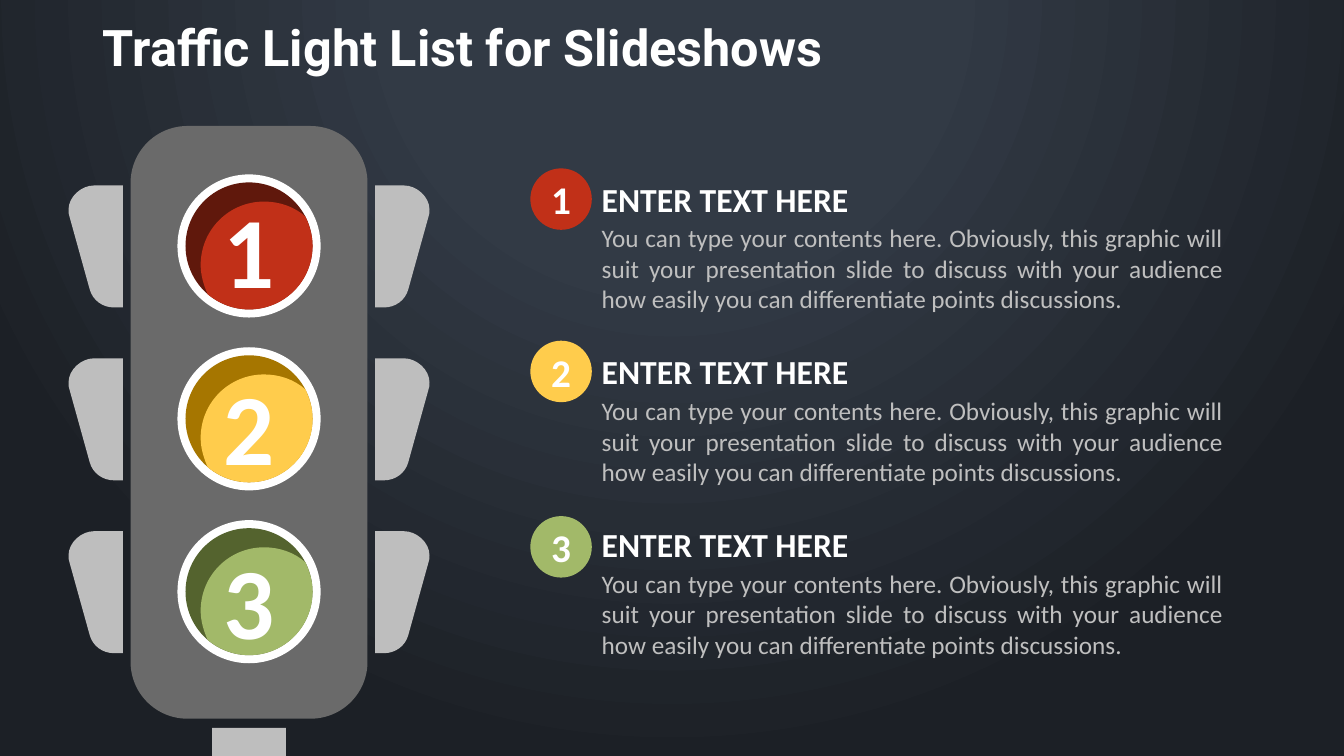
import pptx
import pptx.dml.color
import pptx.enum.shapes
import pptx.enum.text
import pptx.oxml
import pptx.oxml.ns
import pptx.util

RGB = pptx.dml.color.RGBColor
SHAPE = pptx.enum.shapes.MSO_SHAPE
ALIGN = pptx.enum.text.PP_ALIGN
ANCHOR = pptx.enum.text.MSO_ANCHOR
FIT = pptx.enum.text.MSO_AUTO_SIZE
inch = pptx.util.Inches
qn = pptx.oxml.ns.qn

# Content
TITLE = "Traffic Light List for Slideshows"
BODY = ("You can type your contents here. Obviously, this graphic will suit "
        "your presentation slide to discuss with your audience how easily "
        "you can differentiate points discussions.")
WHITE = RGB(0xFF, 0xFF, 0xFF)
HOUSING, METAL = RGB(0x6A, 0x6A, 0x6A), RGB(0xBE, 0xBE, 0xBE)
BODY_GREY = RGB(0xBF, 0xBF, 0xBF)
SKY, NIGHT = RGB(0x32, 0x3A, 0x45), RGB(0x1C, 0x20, 0x26)
# number, heading, text, light colour, shade colour, digit top, badge top
ITEMS = [
    ("1", "ENTER TEXT HERE", BODY, RGB(0xC1, 0x30, 0x18), RGB(0x60, 0x18, 0x0C), 1.81, 1.67),
    ("2", "ENTER TEXT HERE", BODY, RGB(0xFF, 0xCC, 0x4C), RGB(0xA6, 0x76, 0x00), 3.56, 3.38),
    ("3", "ENTER TEXT HERE", BODY, RGB(0xA2, 0xB9, 0x69), RGB(0x54, 0x63, 0x2E), 5.29, 5.12),
]

# Outlines in inches: a pair is a line end, six numbers are a curve
VISOR = [(0, 1.21), (0, 0), (0.29, 0),
         (0.41, 0, 0.54, 0.11, 0.54, 0.24), (0.54, 0.26, 0.54, 0.29, 0.53, 0.31),
         (0.33, 1.03), (0.3, 1.14, 0.2, 1.21, 0.09, 1.21)]
LIT_PART = [(0.63, 0), (0.63, 0.35, 0.35, 0.63, 0, 0.63),
            (-0.16, 0.63, -0.3, 0.57, -0.41, 0.48),
            (-0.45, 0.39, -0.48, 0.29, -0.48, 0.19),
            (-0.48, -0.16, -0.2, -0.44, 0.15, -0.44),
            (0.3, -0.44, 0.45, -0.39, 0.56, -0.29),
            (0.6, -0.2, 0.63, -0.11, 0.63, 0)]

# Grid, in inches
W, H = 13.33, 7.5
ROW_TOP, ROW_STEP = 1.73, 1.715
LIGHT_X = 2.47              # centre line of the traffic light
HOUSING_W, VISOR_X = 2.35, 1.25
RING, LAMP = 1.42, 1.26     # diameters
BADGE_X, BADGE = 5.26, 0.61
TEXT_X = 5.87

prs = pptx.Presentation()
prs.slide_width, prs.slide_height = inch(W), inch(H)
s = prs.slides.add_slide(prs.slide_layouts[5])


def paint(sp, colour):
    sp.shadow.inherit = False
    sp.fill.solid()
    sp.fill.fore_color.rgb = colour
    sp.line.fill.background()
    return sp


def preset(kind, x, y, w, h, colour):
    return paint(s.shapes.add_shape(kind, inch(x), inch(y), inch(w), inch(h)), colour)


def outline(parts, x, y, colour, side=1):
    """Draw parts from (x, y); side -1 mirrors them left to right."""
    pts = [(inch(x + side * part[i]), inch(y + part[i + 1]))
           for part in parts for i in range(0, len(part), 2)]
    fb = s.shapes.build_freeform(*pts[0], scale=1.0)
    fb.add_line_segments(pts[1:], close=True)
    sp = paint(fb.convert_to_shape(), colour)
    lines = iter(sp._element.xpath(".//a:lnTo"))
    for part in parts[1:]:
        first = next(lines)
        if len(part) == 6:      # three line ends become one curve
            first.tag = qn("a:cubicBezTo")
            for line in (next(lines), next(lines)):
                first.append(line[0])
                line.getparent().remove(line)


def write(sp, text, size, colour=WHITE, bold=True, align=ALIGN.LEFT,
          anchor=ANCHOR.TOP, wrap=True, name="Calibri"):
    tf = sp.text_frame
    tf.word_wrap, tf.vertical_anchor = wrap, anchor
    p = tf.paragraphs[0]
    p.alignment = align
    r = p.add_run()
    r.text = text
    r.font.color.rgb = colour
    for key, value in {"size": pptx.util.Pt(size), "bold": bold, "name": name}.items():
        setattr(r.font, key, value)
    return tf


def textbox(x, y, w, h, text, size, **style):
    sp = s.shapes.add_textbox(inch(x), inch(y), inch(w), inch(h))
    write(sp, text, size, **style).auto_size = FIT.SHAPE_TO_FIT_TEXT


# Background
fill = s.background.fill
fill.gradient()
for stop, colour, position in zip(fill.gradient_stops, (SKY, NIGHT), (0.35, 1)):
    stop.color.rgb, stop.position = colour, position
grad = s._element.xpath(".//a:gradFill")[0]
grad.remove(grad.find(qn("a:lin")))
grad.append(pptx.oxml.parse_xml(
    f'<a:path {pptx.oxml.ns.nsdecls("a")} path="circle">'
    '<a:fillToRect l="50000" t="-80000" r="50000" b="180000"/></a:path>'))

# Title
title = s.shapes.title
title.left, title.top, title.width, title.height = map(inch, (0.92, 0.18, 11.5, 0.81))
tf = write(title, TITLE, 36, name="Roboto")
tf.margin_left, tf.margin_top, tf.margin_right, tf.margin_bottom = map(inch, (0.1, 0.05, 0, 0.05))
tf.auto_size = FIT.NONE
tf.paragraphs[0].line_spacing = 0.9

# Housing and pole
housing = preset(SHAPE.ROUNDED_RECTANGLE, LIGHT_X - HOUSING_W / 2, 1.25,
                 HOUSING_W, 5.88, HOUSING)
housing.adjustments[0] = 0.24
preset(SHAPE.RECTANGLE, LIGHT_X - 0.73 / 2, 7.22, 0.73, H - 7.22, METAL)

for row, (number, heading, body, light, shade, digit_top, badge_top) in enumerate(ITEMS):
    top = ROW_TOP + row * ROW_STEP
    cy = top + RING / 2

    # Visors on both sides
    for side in (1, -1):
        outline(VISOR, LIGHT_X + side * VISOR_X, top + 0.11, METAL, side)

    # Lamp
    for size, colour in ((RING, WHITE), (LAMP, shade)):
        preset(SHAPE.OVAL, LIGHT_X - size / 2, cy - size / 2, size, size, colour)
    outline(LIT_PART, LIGHT_X, cy, light)
    textbox(LIGHT_X - 0.71 / 2, digit_top, 0.71, 1.31, number, 72,
            align=ALIGN.CENTER, anchor=ANCHOR.MIDDLE, wrap=False)

    # List entry
    textbox(TEXT_X, top + 0.43, 6.36, 1.01, body, 18, colour=BODY_GREY,
            bold=False, align=ALIGN.JUSTIFY)
    textbox(TEXT_X, top - 0.01, 5.26, 0.5, heading, 24, anchor=ANCHOR.BOTTOM)
    badge = preset(SHAPE.OVAL, BADGE_X, badge_top, BADGE, BADGE, light)
    write(badge, number, 28, align=ALIGN.CENTER, anchor=ANCHOR.MIDDLE)

prs.save("out.pptx")
